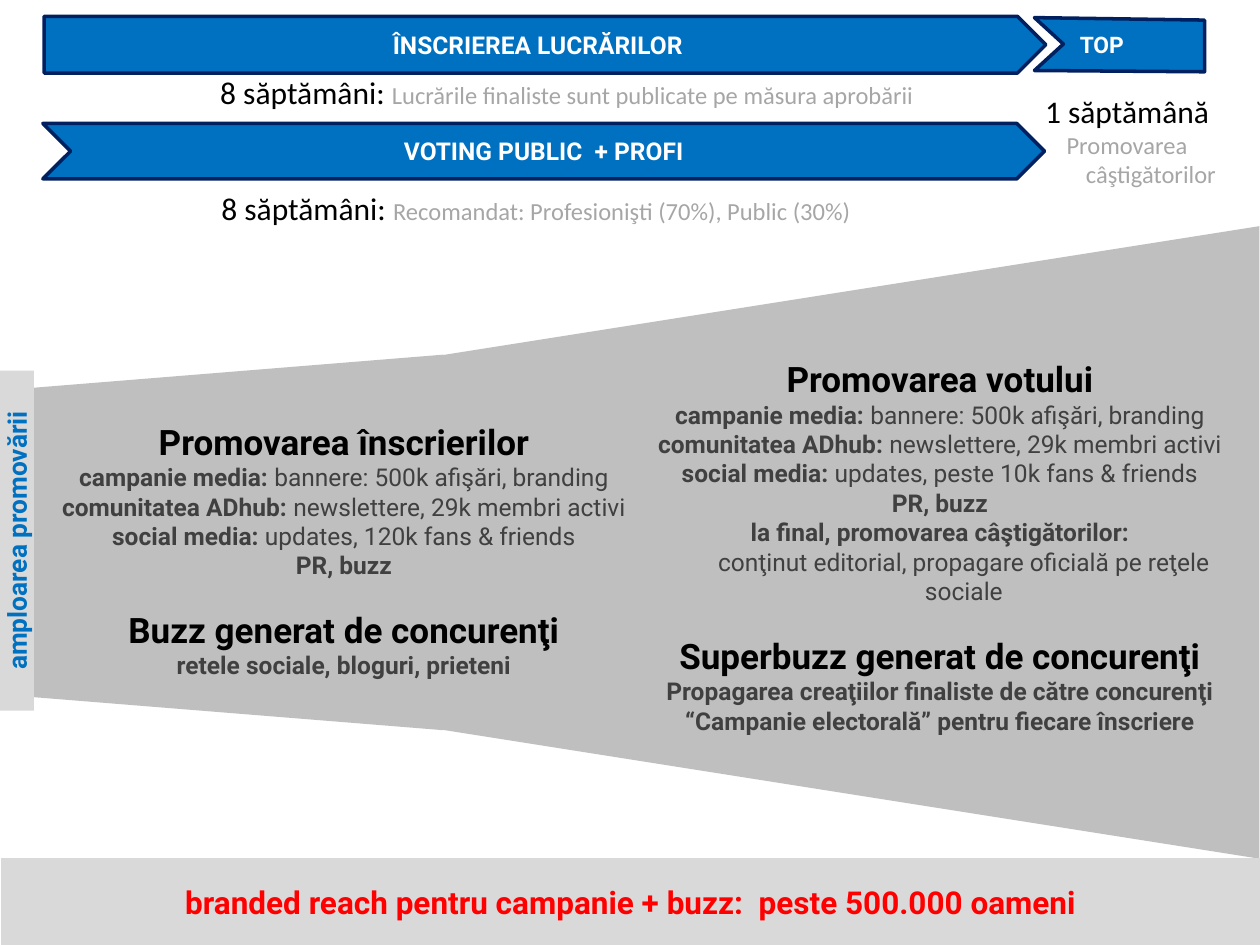
from lxml.etree import SubElement
from pptx import Presentation
from pptx.dml.color import RGBColor
from pptx.enum.shapes import MSO_SHAPE
from pptx.enum.text import MSO_ANCHOR, MSO_AUTO_SIZE, PP_ALIGN
from pptx.oxml.ns import qn
from pptx.util import Inches, Pt

BLACK = RGBColor(0x00, 0x00, 0x00)
WHITE = RGBColor(0xFF, 0xFF, 0xFF)
RED = RGBColor(0xFF, 0x00, 0x00)
BLUE = RGBColor(0x00, 0x70, 0xC0)
NAVY = RGBColor(0x00, 0x20, 0x60)
CHARCOAL = RGBColor(0x40, 0x40, 0x40)
MUTED = RGBColor(0xA6, 0xA6, 0xA6)
FUNNEL = RGBColor(0xBF, 0xBF, 0xBF)
PANEL = RGBColor(0xD9, 0xD9, 0xD9)

COLUMNS, ROWS = 100, 75
HANGING = Inches(0.38)
LINE_BREAK = "\n"


def style(name, size, color, bold=False):
    return {"name": name, "size": Pt(size), "bold": bold}, color


STYLES = {
    "heading": style("Roboto", 20, BLACK, True),
    "strong": style("Roboto", 14, CHARCOAL, True),
    "plain": style("Roboto", 14, CHARCOAL),
    "duration": style("Calibri", 18, BLACK),
    "remark": style("Calibri", 14, MUTED),
    "phase": style("Roboto", 14, WHITE, True),
    "top": style("Roboto", 13, WHITE, True),
    "axis": style("Roboto", 15, BLUE, True),
    "reach": style("Roboto", 18, RED, True),
}


class CampaignSlide:
    """Draws campaign elements on a grid of the current slide."""

    def __init__(self, deck):
        self.slide = deck.slides.add_slide(deck.slide_layouts[3])
        self.column = deck.slide_width / COLUMNS
        self.row = deck.slide_height / ROWS

    def area(self, left, top, width, height):
        return (round(left * self.column), round(top * self.row),
                round(width * self.column), round(height * self.row))

    def fill_text(self, shape, paragraphs, hanging=False, align=PP_ALIGN.CENTER,
                  anchor=MSO_ANCHOR.MIDDLE):
        frame = shape.text_frame
        settings = {"word_wrap": True, "auto_size": MSO_AUTO_SIZE.NONE,
                    "vertical_anchor": anchor}
        for key, value in settings.items():
            setattr(frame, key, value)
        for index, (gap, *runs) in enumerate(paragraphs):
            paragraph = frame.paragraphs[0] if index == 0 else frame.add_paragraph()
            if hanging:
                properties = paragraph._p.get_or_add_pPr()
                properties.set("marL", str(HANGING))
                properties.set("indent", str(-HANGING))
                SubElement(properties, qn("a:buNone"))
            paragraph.alignment = align
            paragraph.space_before = Pt(gap)
            for text, role in runs:
                self.add_run(paragraph, text, role)

    def add_run(self, paragraph, text, role):
        values, color = STYLES[role]
        if text == LINE_BREAK:
            paragraph.add_line_break()
            SubElement(paragraph._p[-1], qn("a:rPr"), sz=str(values["size"].centipoints))
            return
        run = paragraph.add_run()
        run.text = text
        for key, value in values.items():
            setattr(run.font, key, value)
        run.font.color.rgb = color

    def paint(self, shape, fill, outline=None):
        shape.shadow.inherit = False
        shape.fill.solid()
        shape.fill.fore_color.rgb = fill
        if outline is None:
            shape.line.fill.background()
        else:
            shape.line.color.rgb = outline
            shape.line.width = Pt(2)

    def block(self, kind, area, fill, outline=None, label=None, rotation=0, taper=None):
        shape = self.slide.shapes.add_shape(kind, *self.area(*area))
        self.paint(shape, fill, outline)
        shape.rotation = rotation
        if taper is not None:
            shape.adjustments[0] = taper
        if label:
            self.fill_text(shape, [(0, label)])

    def ribbon(self, points, label, inset):
        scaled = [(round(x * self.column), round(y * self.row)) for x, y in points]
        builder = self.slide.shapes.build_freeform(*scaled[0])
        builder.add_line_segments(scaled[1:], close=True)
        shape = builder.convert_to_shape()
        self.paint(shape, BLUE, NAVY)
        shape.text_frame.margin_left = round(inset * self.column)
        self.fill_text(shape, [(0, label)], align=PP_ALIGN.LEFT)

    def caption(self, area, *paragraphs):
        box = self.slide.shapes.add_textbox(*self.area(*area))
        self.fill_text(box, paragraphs, hanging=True, anchor=MSO_ANCHOR.TOP)

    def placeholder(self, index, area, paragraphs, hanging=True):
        shape = self.slide.placeholders[index]
        places = zip(("left", "top", "width", "height"), self.area(*area))
        for key, value in places:
            setattr(shape, key, value)
        shape.element.getparent().append(shape.element)
        self.fill_text(shape, paragraphs, hanging)
        return shape


def promotion(heading, friends):
    return [
        (0, (heading, "heading")),
        (0, ("campanie media: ", "strong"), ("bannere: 500k afişări, branding", "plain")),
        (0, ("comunitatea ADhub: ", "strong"), ("newslettere, 29k membri activi", "plain")),
        (0, ("social media: ", "strong"), (f"updates, {friends} fans & friends", "plain")),
        (0, ("PR, buzz", "strong")),
    ]


def main():
    deck = Presentation()
    deck.slide_width, deck.slide_height = Inches(10), Inches(7.5)
    campaign = CampaignSlide(deck)

    campaign.block(MSO_SHAPE.TRAPEZOID, (2.7, 25.5, 29.8, 35.1), FUNNEL,
                   rotation=270, taper=0.095)
    campaign.block(MSO_SHAPE.TRAPEZOID, (42.4, 10.6, 50.2, 64.9), FUNNEL,
                   rotation=270, taper=0.204)

    campaign.placeholder(2, (49.4, 20.9, 50.4, 44.9), [
        *promotion("Promovarea votului", "peste 10k"),
        (0, ("la final, promovarea câştigătorilor:", "strong"), (LINE_BREAK, "strong"),
         ("conţinut editorial, propagare oficială pe reţele sociale", "plain")),
        (16.4, ("Superbuzz generat de concurenţi", "heading")),
        (0, ("Propagarea creaţiilor finaliste de către concurenţi", "strong")),
        (0, ("“Campanie electorală” pentru fiecare înscriere", "strong")),
    ])
    reach = campaign.placeholder(0, (0.1, 68.1, 99.9, 6.9), [
        (0, ("branded reach pentru campanie + buzz:  peste 500.000 oameni", "reach")),
    ], hanging=False)
    campaign.paint(reach, PANEL)
    campaign.placeholder(1, (2.1, 29.8, 50.4, 27.7), [
        *promotion("Promovarea înscrierilor", "120k"),
        (16.4, ("Buzz generat de concurenţi", "heading")),
        (0, ("retele sociale, bloguri, prieteni", "strong")),
    ])

    weeks = ("8 săptămâni: ", "duration")
    campaign.caption((5.8, 5.3, 78.4, 4), (
        0, weeks, ("Lucrările finaliste sunt publicate pe măsura aprobării", "remark")))
    campaign.caption((13.8, 14.5, 57.5, 4), (
        0, weeks, ("Recomandat: Profesionişti (70%), Public (30%)", "remark")))
    campaign.caption((80.8, 6.8, 17.3, 8.8), (0, ("1 săptămână", "duration")),
                     (0, ("Promovarea câştigătorilor", "remark")))

    campaign.block(MSO_SHAPE.PENTAGON, (3.5, 1.3, 79.5, 4.5), BLUE, NAVY,
                   ("ÎNSCRIEREA LUCRĂRILOR", "phase"))
    campaign.ribbon([(82.1, 1.4), (95.6, 1.6), (95.6, 5.7), (82.1, 5.6), (84.4, 3.5)],
                    ("TOP", "top"), inset=3.6)
    campaign.block(MSO_SHAPE.RECTANGLE, (-12.2, 41.5, 27, 2.8), PANEL,
                   label=("amploarea promovării", "axis"), rotation=270)
    campaign.block(MSO_SHAPE.CHEVRON, (3.4, 9.8, 79.5, 4.4), BLUE, NAVY,
                   ("VOTING PUBLIC  + PROFI", "phase"))

    deck.save("out.pptx")


if __name__ == "__main__":
    main()
